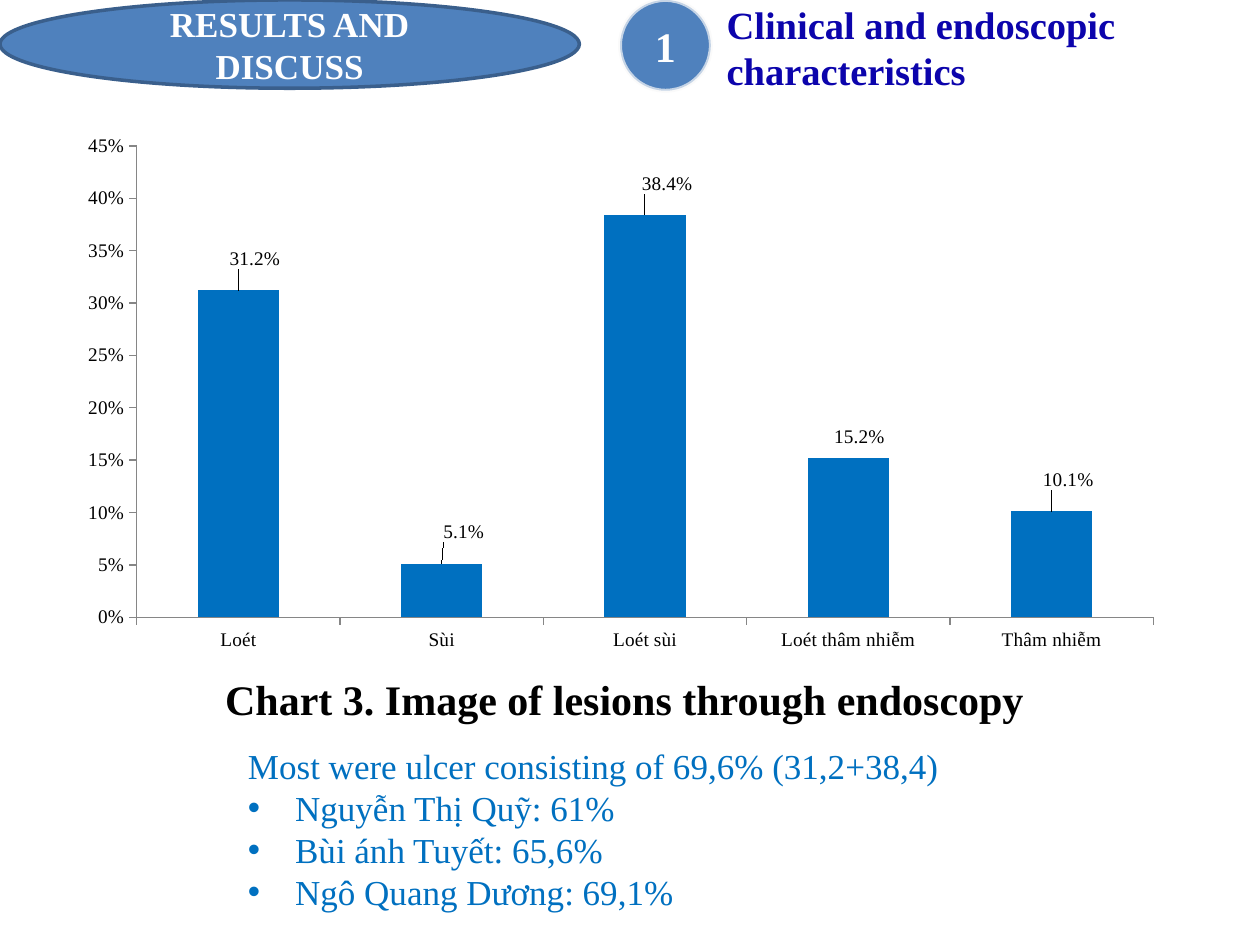
import lxml.etree
import pptx
import pptx.chart.data
import pptx.dml.color
import pptx.enum.chart
import pptx.enum.shapes
import pptx.enum.text
import pptx.oxml
import pptx.oxml.ns
import pptx.util

Cm = pptx.util.Cm
Pt = pptx.util.Pt
RGBColor = pptx.dml.color.RGBColor
qn = pptx.oxml.ns.qn

FONT = "Times New Roman"
WHITE = RGBColor(0xFF, 0xFF, 0xFF)
BLACK = RGBColor(0, 0, 0)
STEEL = RGBColor(0x4F, 0x81, 0xBD)
DARK_STEEL = RGBColor(0x3A, 0x5F, 0x8C)
PALE = RGBColor(0xF8, 0xF8, 0xF8)
NAVY = RGBColor(0x0C, 0x04, 0xAC)
BLUE = RGBColor(0x00, 0x70, 0xC0)
AXIS_GREY = RGBColor(0x86, 0x86, 0x86)

LESIONS = [
    ("Loét", 0.312, (0.015, -0.03)),
    ("Sùi", 0.051, (0.02, -0.03)),
    ("Loét sùi", 0.384, (0.02, -0.03)),
    ("Loét thâm nhiễm", 0.152, (0.01, -0.01)),
    ("Thâm nhiễm", 0.101, (0.015, -0.03)),
]
STUDIES = ["Nguyễn Thị Quỹ: 61%", "Bùi ánh Tuyết: 65,6%", "Ngô Quang Dương: 69,1%"]


def place(left, top, width, height):
    return Cm(left), Cm(top), Cm(width), Cm(height)


def style_font(font, size, color, bold=False):
    font.name = FONT
    font.size = Pt(size)
    font.bold = bold
    font.color.rgb = color


def write_lines(frame, lines, size, color, bold=False, align=None):
    for index, line in enumerate(lines):
        para = frame.add_paragraph() if index else frame.paragraphs[0]
        para.alignment = align
        span = para.add_run()
        span.text = line
        style_font(span.font, size, color, bold)


def add_text(page, position, lines, size, color, bold=False):
    box = page.shapes.add_textbox(*position)
    box.text_frame.word_wrap = True
    write_lines(box.text_frame, lines, size, color, bold)
    return box.text_frame


def add_ellipse(page, position, lines, size, line_color, line_width):
    ellipse = page.shapes.add_shape(pptx.enum.shapes.MSO_SHAPE.OVAL, *position)
    ellipse.shadow.inherit = False
    ellipse.fill.solid()
    ellipse.fill.fore_color.rgb = STEEL
    ellipse.line.color.rgb = line_color
    ellipse.line.width = Pt(line_width)
    ellipse.text_frame.vertical_anchor = pptx.enum.text.MSO_ANCHOR.MIDDLE
    write_lines(ellipse.text_frame, lines, size, WHITE, True, pptx.enum.text.PP_ALIGN.CENTER)
    return ellipse


def hang(para, bullet=None):
    properties = para._p.get_or_add_pPr()
    properties.set("marL", str(Cm(0.95)))
    properties.set("indent", str(-Cm(0.95)))
    if bullet:
        lxml.etree.SubElement(properties, qn("a:buFont")).set("typeface", "Arial")
        lxml.etree.SubElement(properties, qn("a:buChar")).set("char", bullet)


def manual_layout(**settings):
    layout = pptx.oxml.parse_xml(
        '<c:layout xmlns:c="http://schemas.openxmlformats.org/drawingml/2006/chart">'
        "<c:manualLayout/></c:layout>"
    )
    for name, value in settings.items():
        lxml.etree.SubElement(layout[0], qn("c:" + name)).set("val", str(value))
    return layout


def style_axis(axis):
    axis.has_major_gridlines = False
    axis.major_tick_mark = pptx.enum.chart.XL_TICK_MARK.OUTSIDE
    axis.format.line.color.rgb = AXIS_GREY
    axis.format.line.width = Pt(0.75)
    style_font(axis.tick_labels.font, 11, BLACK)


def add_lesion_chart(page, position):
    data = pptx.chart.data.CategoryChartData(number_format="0.0%")
    data.categories = [name for name, share, shift in LESIONS]
    data.add_series("Series 1", [share for name, share, shift in LESIONS])
    kind = pptx.enum.chart.XL_CHART_TYPE.COLUMN_CLUSTERED
    chart = page.shapes.add_chart(kind, *position, data).chart
    chart.has_legend = False
    chart.has_title = False
    style_font(chart.font, 11, BLACK)

    style_axis(chart.category_axis)
    style_axis(chart.value_axis)
    chart.value_axis.minimum_scale = 0
    chart.value_axis.maximum_scale = 0.45
    chart.value_axis.major_unit = 0.05
    chart.value_axis.tick_labels.number_format = "0%"
    chart.value_axis.tick_labels.number_format_is_linked = False

    plot = chart.plots[0]
    plot.gap_width = 150
    plot.vary_by_categories = False
    series = plot.series[0]
    series.format.fill.solid()
    series.format.fill.fore_color.rgb = BLUE

    labels = series.data_labels
    labels.show_value = True
    labels.number_format = "0.0%"
    labels.number_format_is_linked = False
    style_font(labels.font, 11, BLACK)
    for index, (name, share, (across, down)) in enumerate(LESIONS):
        label = series.points[index].data_label
        style_font(label.font, 11, BLACK)
        label.position = pptx.enum.chart.XL_LABEL_POSITION.OUTSIDE_END
        element = labels._element.find(f"{qn('c:dLbl')}[{index + 1}]")
        element.insert(1, manual_layout(x=across, y=down))

    area = chart._chartSpace.chart.plotArea
    for old in area.findall(qn("c:layout")):
        area.remove(old)
    area.insert(0, manual_layout(layoutTarget="inner", xMode="edge", yMode="edge",
                                 x=0.065, y=0.04, w=0.915, h=0.88))


def main():
    deck = pptx.Presentation()
    deck.slide_width, deck.slide_height = Cm(25.4), Cm(19.05)
    page = deck.slides.add_slide(deck.slide_layouts[6])

    caption = add_text(page, place(4.29, 13.46, 17.35, 1.4),
                       ["Chart 3. Image of lesions through endoscopy"], 24, BLACK, True)
    caption.paragraphs[0].space_before = Pt(4.8)
    hang(caption.paragraphs[0])

    number = add_ellipse(page, place(12.5, 0, 1.83, 1.83), ["1"], 24, PALE, 2.25)
    number.text_frame.word_wrap = False
    line_color = number.line._ln.find(f".//{qn('a:srgbClr')}")
    lxml.etree.SubElement(line_color, qn("a:alpha")).set("val", "70000")

    heading = add_text(page, place(14.4, -0.48, 12.5, 3.84),
                       ["Clinical and endoscopic characteristics"], 22, NAVY, True)
    heading.margin_top = Cm(0.5)

    add_ellipse(page, place(0, 0, 11.68, 1.78), ["RESULTS AND", "DISCUSS"], 20, DARK_STEEL, 2)

    findings = add_text(page, place(4.75, 14.88, 15.75, 3.68),
                        ["Most were ulcer consisting of 69,6% (31,2+38,4)"] + STUDIES, 20, BLUE)
    for para in findings.paragraphs[1:]:
        hang(para, "•")

    add_lesion_chart(page, place(1.3, 2.51, 22.4, 10.8))
    deck.save("out.pptx")


if __name__ == "__main__":
    main()
